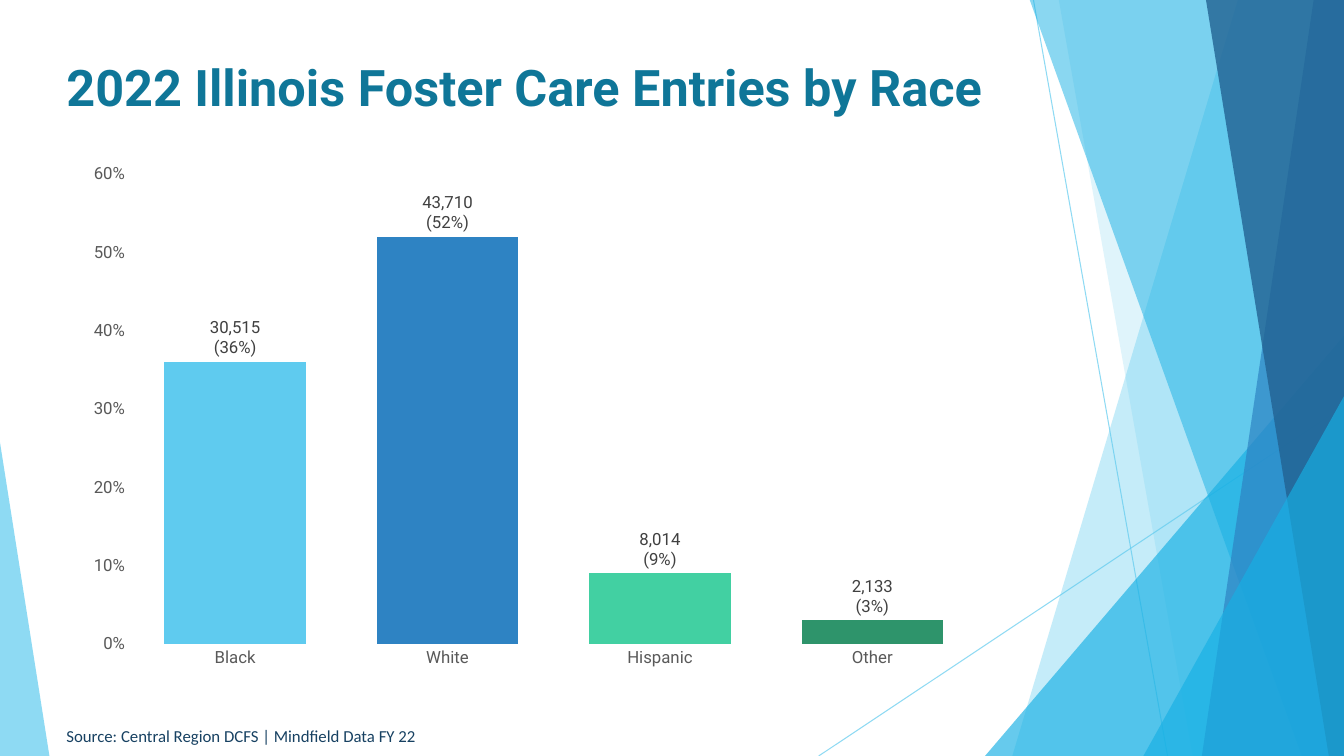
from lxml import etree
from pptx import Presentation
from pptx.chart.data import CategoryChartData
from pptx.dml.color import RGBColor
from pptx.enum.chart import XL_CHART_TYPE as ChartType, XL_LABEL_POSITION as LabelPos, XL_TICK_MARK as Tick
from pptx.enum.shapes import MSO_CONNECTOR as Connector, MSO_SHAPE as Shape
from pptx.enum.text import MSO_ANCHOR as Anchor
from pptx.oxml import parse_xml
from pptx.oxml.ns import nsdecls, qn
from pptx.util import Inches, Pt

# Content
TITLE = "2022 Illinois Foster Care Entries by Race"
SOURCE = "Source: Central Region DCFS | Mindfield Data FY 22"
ENTRIES = [  # race, share, entries, bar colour
    ("Black", 0.36, "30,515", "sky"),
    ("White", 0.52, "43,710", "blue"),
    ("Hispanic", 0.09, "8,014", "mint"),
    ("Other", 0.03, "2,133", "green"),
]

THEME = {
    "sky": "5FCBEF", "cyan": "17B0E4", "blue": "2E83C3", "navy": "226292",
    "mint": "42D0A2", "green": "2E946B",
    "title": "0F7698", "source": "174162", "axis": "595959", "label": "404040",
    "font": "Roboto", "source_font": "Calibri",
    "title_size": 36, "small_size": 12,
}

# Decoration, back to front
WIDTH, HEIGHT = 13.33, 7.5
FACET_TOP = -0.01
RAYS = [((10.25, 0), (11.58, HEIGHT)), ((WIDTH, 4.03), (8.12, HEIGHT))]
FACETS = [  # top-left x, bottom-left x, colour, opacity %; all reach the right edge
    (12.28, 10.04, "sky", 36),
    (10.5, 11.83, "sky", 20),
    ("triangle", (9.77, 3.33, 3.56, 4.17), 1, "cyan", 66),
    (10.21, 12.91, "cyan", 50),
    (13.03, 11.92, "blue", 70),
    (11.96, 13.18, "navy", 80),
    ("triangle", (11.34, 3.93, 1.99, 3.57), 1, "cyan", 66),
    ("triangle", (0, 4.39, 0.49, 3.11), 0, "sky", 70),
]


def rgb(name):
    return RGBColor.from_string(THEME[name])


def style_font(font, size="small_size", color="label", face="font", bold=False):
    font.size = Pt(THEME[size])
    font.name = THEME[face]
    font.bold = bold
    font.color.rgb = rgb(color)


def write_text(frame, text, **style):
    frame.text = text
    for paragraph in frame.paragraphs:
        for run in paragraph.runs:
            style_font(run.font, **style)


def set_opacity(part, percent):
    for color in part._element.spPr.iter(qn("a:srgbClr")):
        etree.SubElement(color, qn("a:alpha")).set("val", str(percent * 1000))


def paint(facet, color, opacity):
    facet.shadow.inherit = False
    facet.fill.solid()
    facet.fill.fore_color.rgb = rgb(color)
    facet.line.fill.background()
    set_opacity(facet, opacity)


def add_text_box(slide, box, text, wrap, anchor, **style):
    frame = slide.shapes.add_textbox(*map(Inches, box)).text_frame
    frame.word_wrap = wrap
    frame.vertical_anchor = anchor
    write_text(frame, text, **style)


def add_decoration(slide):
    for start, end in RAYS:
        ray = slide.shapes.add_connector(Connector.STRAIGHT, *map(Inches, start + end))
        ray.line.color.rgb = rgb("sky")
        ray.line.width = Pt(0.75)
        set_opacity(ray, 70)
        etree.SubElement(ray._element.spPr, qn("a:effectLst"))
    for *outline, color, opacity in FACETS:
        if outline[0] == "triangle":
            _, box, apex = outline
            facet = slide.shapes.add_shape(Shape.ISOSCELES_TRIANGLE, *map(Inches, box))
            facet.adjustments[0] = apex
        else:
            top_x, bottom_x = outline
            builder = slide.shapes.build_freeform(Inches(top_x), Inches(FACET_TOP))
            corners = [(WIDTH, FACET_TOP), (WIDTH, HEIGHT), (bottom_x, HEIGHT)]
            builder.add_line_segments([(Inches(x), Inches(y)) for x, y in corners])
            facet = builder.convert_to_shape()
        paint(facet, color, opacity)


def add_entries_chart(slide, box):
    data = CategoryChartData(number_format="0%")
    data.categories = [race for race, *_ in ENTRIES]
    data.add_series("Series 1", [share for _, share, *_ in ENTRIES])
    chart = slide.shapes.add_chart(
        ChartType.COLUMN_CLUSTERED, *map(Inches, box), data).chart
    chart.has_legend = chart.has_title = False
    style_font(chart.font)

    # Axes
    for axis in (chart.category_axis, chart.value_axis):
        axis.major_tick_mark = axis.minor_tick_mark = Tick.NONE
        axis.has_major_gridlines = False
        axis.format.line.fill.background()
        style_font(axis.tick_labels.font, color="axis")
    shares = chart.value_axis
    shares.minimum_scale, shares.maximum_scale, shares.major_unit = 0, 0.6, 0.1
    shares.tick_labels.number_format = "0%"
    shares.tick_labels.number_format_is_linked = False

    # Bars and their labels
    plot = chart.plots[0]
    plot.gap_width = 50
    plot.vary_by_categories = False
    bars = plot.series[0]
    bars.format.fill.solid()
    bars.format.fill.fore_color.rgb = rgb("sky")
    labels = bars.data_labels
    labels.show_value = True
    labels.number_format = "0%"
    labels.number_format_is_linked = False
    labels.position = LabelPos.OUTSIDE_END
    style_font(labels.font)
    for index, (_, share, count, color) in enumerate(ENTRIES):
        bar = bars.points[index]
        bar.format.fill.solid()
        bar.format.fill.fore_color.rgb = rgb(color)
        write_text(bar.data_label.text_frame, f"{count}\n({share:.0%})")
        bar.data_label.position = LabelPos.OUTSIDE_END

    # Fixed plot area, as fractions of the chart
    plot_area = chart._chartSpace.chart.plotArea
    for layout in plot_area.findall(qn("c:layout")):
        plot_area.remove(layout)
    plot_area.insert(0, parse_xml(
        f'<c:layout {nsdecls("c")}><c:manualLayout><c:layoutTarget val="inner"/>'
        '<c:xMode val="edge"/><c:yMode val="edge"/><c:x val="0.06"/><c:y val="0.04"/>'
        '<c:w val="0.92"/><c:h val="0.9"/></c:manualLayout></c:layout>'))


def main():
    deck = Presentation()
    deck.slide_width, deck.slide_height = Inches(WIDTH), Inches(HEIGHT)
    slide = deck.slides.add_slide(deck.slide_layouts[6])
    add_decoration(slide)
    add_text_box(slide, (0.56, 0.5, 9.68, 0.71), TITLE, True, Anchor.MIDDLE,
                 size="title_size", color="title", bold=True)
    add_entries_chart(slide, (0.73, 1.52, 9.16, 5.18))
    add_text_box(slide, (0.56, 7.15, 3.76, 0.3), SOURCE, False, Anchor.TOP,
                 color="source", face="source_font")
    deck.save("out.pptx")


if __name__ == "__main__":
    main()
